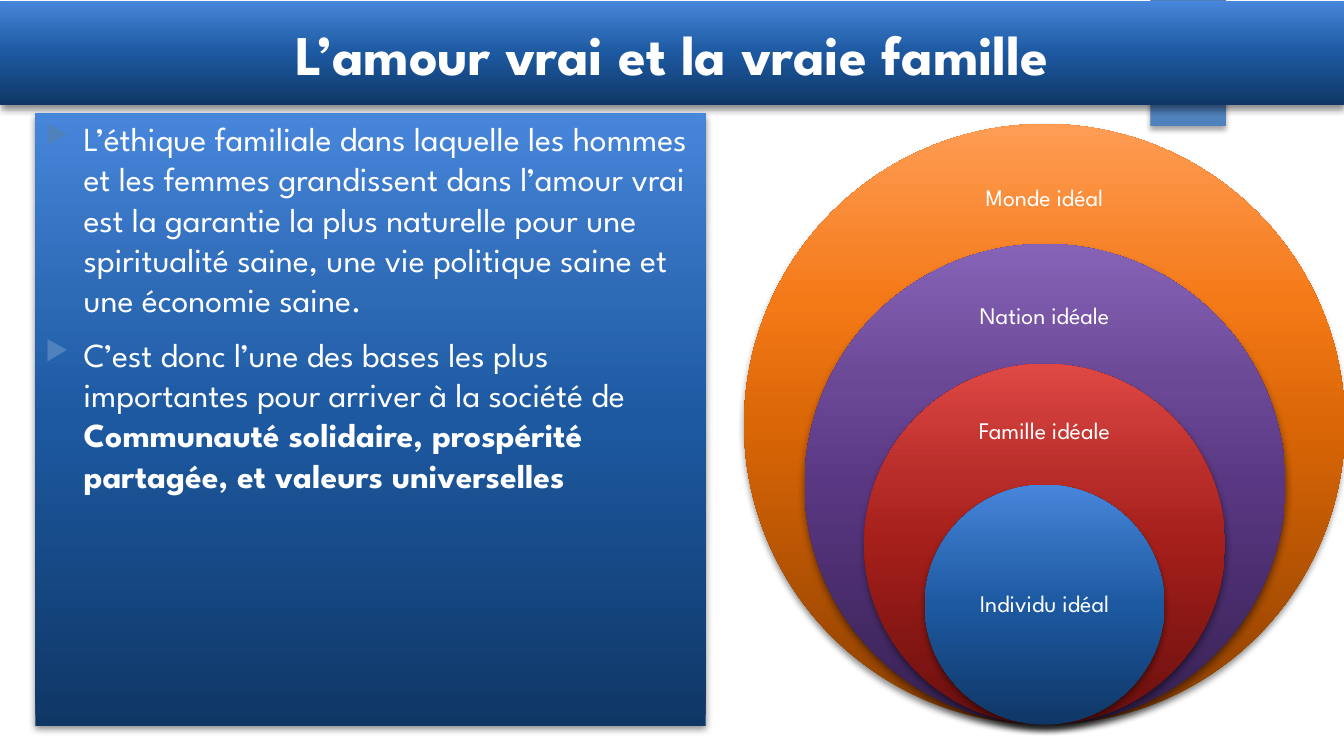
from typing import NamedTuple

from lxml.etree import SubElement
from pptx import Presentation
from pptx.dml.color import RGBColor
from pptx.enum.shapes import MSO_SHAPE
from pptx.enum.text import MSO_ANCHOR, MSO_AUTO_SIZE, PP_ALIGN
from pptx.oxml import parse_xml
from pptx.oxml.ns import nsdecls, qn
from pptx.util import Emu, Pt

EMU_PER_PX = 9144  # 100 px to the inch
FONT = "League Spartan"
WHITE = "FFFFFF"
ACCENT = "4F81BD"

GRADIENT_STOPS = (0, 50, 70, 100)
BLUE = ("0F3766", "1D59A1", "2D6AB6", "4786DB")
RED = ("68100E", "A41E1A", "B92E2A", "DF4845")
PURPLE = ("372152", "593782", "6A4895", "8763B7")
ORANGE = ("8B3F00", "DA6606", "F47917", "FF9C54")


class Box(NamedTuple):
    left: int
    top: int
    width: int
    height: int


class Circle(NamedTuple):
    label: str
    diameter: int
    colors: tuple
    label_top: int
    label_height: int


CIRCLES_CENTER = 1036
CIRCLES_BOTTOM = 719
LABEL_WIDTH = 168
CIRCLES = (
    Circle("Monde idéal", 596, ORANGE, 153, 89),
    Circle("Nation idéale", 477, PURPLE, 271, 86),
    Circle("Famille idéale", 358, RED, 388, 80),
    Circle("Individu idéal", 238, BLUE, 540, 119),
)

TITLE = "L’amour vrai et la vraie famille"
# Each paragraph is a list of (text, bold) runs.
BULLETS = (
    [("L’éthique familiale dans laquelle les hommes et les femmes grandissent "
      "dans l’amour vrai est la garantie la plus naturelle pour une spiritualité "
      "saine, une vie politique saine et une économie saine.", False)],
    [("C’est donc l’une des bases les plus importantes pour arriver à la société de ", False),
     ("Communauté solidaire, prospérité partagée, et valeurs universelles", True)],
)


def px(length: int) -> Emu:
    return Emu(length * EMU_PER_PX)


def rgb(color: str) -> RGBColor:
    return RGBColor.from_string(color)


def set_attributes(target, values: dict) -> None:
    for name, value in values.items():
        setattr(target, name, value)


def place(shape, box: Box) -> None:
    set_attributes(shape, {name: px(value) for name, value in box._asdict().items()})


def format_font(font, size: int, bold: bool = False) -> None:
    set_attributes(font, {"name": FONT, "size": Pt(size), "bold": bold})
    font.color.rgb = rgb(WHITE)


def format_frame(frame, anchor, inset=None) -> None:
    set_attributes(frame, {"word_wrap": True, "auto_size": MSO_AUTO_SIZE.NONE,
                           "vertical_anchor": anchor})
    if inset is not None:
        sides = ("left", "top", "right", "bottom")
        set_attributes(frame, {f"margin_{side}": px(inset) for side in sides})


def set_shadow(shape, opacity: int, blur: int, distance: int) -> None:
    """Give the shape a black shadow that falls straight down."""
    shape.shadow.inherit = False
    effects = shape.element.spPr.find(qn("a:effectLst"))
    shadow = SubElement(effects, qn("a:outerShdw"), blurRad=str(Pt(blur)),
                        dist=str(Pt(distance)), dir="5400000", rotWithShape="0")
    color = SubElement(shadow, qn("a:srgbClr"), val="000000")
    SubElement(color, qn("a:alpha"), val=str(opacity * 1000))


def set_gradient(shape, colors: tuple) -> None:
    """Fill from bottom to top, with no outline and a soft shadow."""
    stops = "".join(
        f'<a:gs pos="{position * 1000}"><a:srgbClr val="{color}"/></a:gs>'
        for position, color in zip(GRADIENT_STOPS, colors))
    gradient = parse_xml(
        f'<a:gradFill {nsdecls("a")} rotWithShape="1"><a:gsLst>{stops}</a:gsLst>'
        '<a:lin ang="16200000" scaled="0"/></a:gradFill>')
    shape.fill.background()
    properties = shape.element.spPr
    properties.replace(properties.find(qn("a:noFill")), gradient)
    shape.line.fill.background()
    set_shadow(shape, 45, 5, 3)


def add_bullet(paragraph) -> None:
    properties = paragraph._p.get_or_add_pPr()
    properties.set("marL", str(px(38)))
    properties.set("indent", str(px(-38)))
    color = SubElement(properties, qn("a:buClr"))
    SubElement(color, qn("a:srgbClr"), val=ACCENT)
    SubElement(properties, qn("a:buSzPct"), val="80000")
    SubElement(properties, qn("a:buChar"), char="▶")


def add_title(slide) -> None:
    title = slide.shapes.title
    place(title, Box(0, 1, 1333, 103))
    set_gradient(title, BLUE)
    format_frame(title.text_frame, MSO_ANCHOR.MIDDLE)
    paragraph = title.text_frame.paragraphs[0]
    paragraph.alignment = PP_ALIGN.CENTER
    run = paragraph.add_run()
    run.text = TITLE
    format_font(run.font, 40, True)


def add_tab(slide) -> None:
    """Add the tab that hangs behind the title band."""
    tab = slide.shapes.add_shape(MSO_SHAPE.RECTANGLE, *map(px, Box(1141, 0, 75, 125)))
    tab.fill.solid()
    tab.fill.fore_color.rgb = rgb(ACCENT)
    tab.line.fill.background()
    set_shadow(tab, 35, 4, 3)
    slide.shapes.title.element.addprevious(tab.element)


def add_text_panel(slide) -> None:
    panel = slide.shapes.add_shape(MSO_SHAPE.RECTANGLE, *map(px, Box(35, 112, 665, 608)))
    set_gradient(panel, BLUE)
    frame = panel.text_frame
    format_frame(frame, MSO_ANCHOR.TOP)
    for index, runs in enumerate(BULLETS):
        paragraph = frame.add_paragraph() if index else frame.paragraphs[0]
        paragraph.alignment = PP_ALIGN.LEFT
        paragraph.space_before = Pt(10 if index else 0)
        add_bullet(paragraph)
        for text, bold in runs:
            run = paragraph.add_run()
            run.text = text
            format_font(run.font, 24, bold)


def add_circle(slide, circle: Circle) -> None:
    size = circle.diameter
    outline = Box(CIRCLES_CENTER - size // 2, CIRCLES_BOTTOM - size, size, size)
    disc = slide.shapes.add_shape(MSO_SHAPE.OVAL, *map(px, outline))
    set_gradient(disc, circle.colors)

    label_box = Box(CIRCLES_CENTER - LABEL_WIDTH // 2, circle.label_top,
                    LABEL_WIDTH, circle.label_height)
    label = slide.shapes.add_textbox(*map(px, label_box))
    format_frame(label.text_frame, MSO_ANCHOR.MIDDLE, inset=13)
    paragraph = label.text_frame.paragraphs[0]
    set_attributes(paragraph, {"alignment": PP_ALIGN.CENTER, "line_spacing": 0.9})
    run = paragraph.add_run()
    run.text = circle.label
    format_font(run.font, 17)


def main() -> None:
    presentation = Presentation()
    presentation.slide_width = px(1333)
    presentation.slide_height = px(750)
    slide = presentation.slides.add_slide(presentation.slide_layouts[5])
    add_title(slide)
    add_tab(slide)
    add_text_panel(slide)
    for circle in CIRCLES:
        add_circle(slide, circle)
    presentation.save("out.pptx")


if __name__ == "__main__":
    main()
